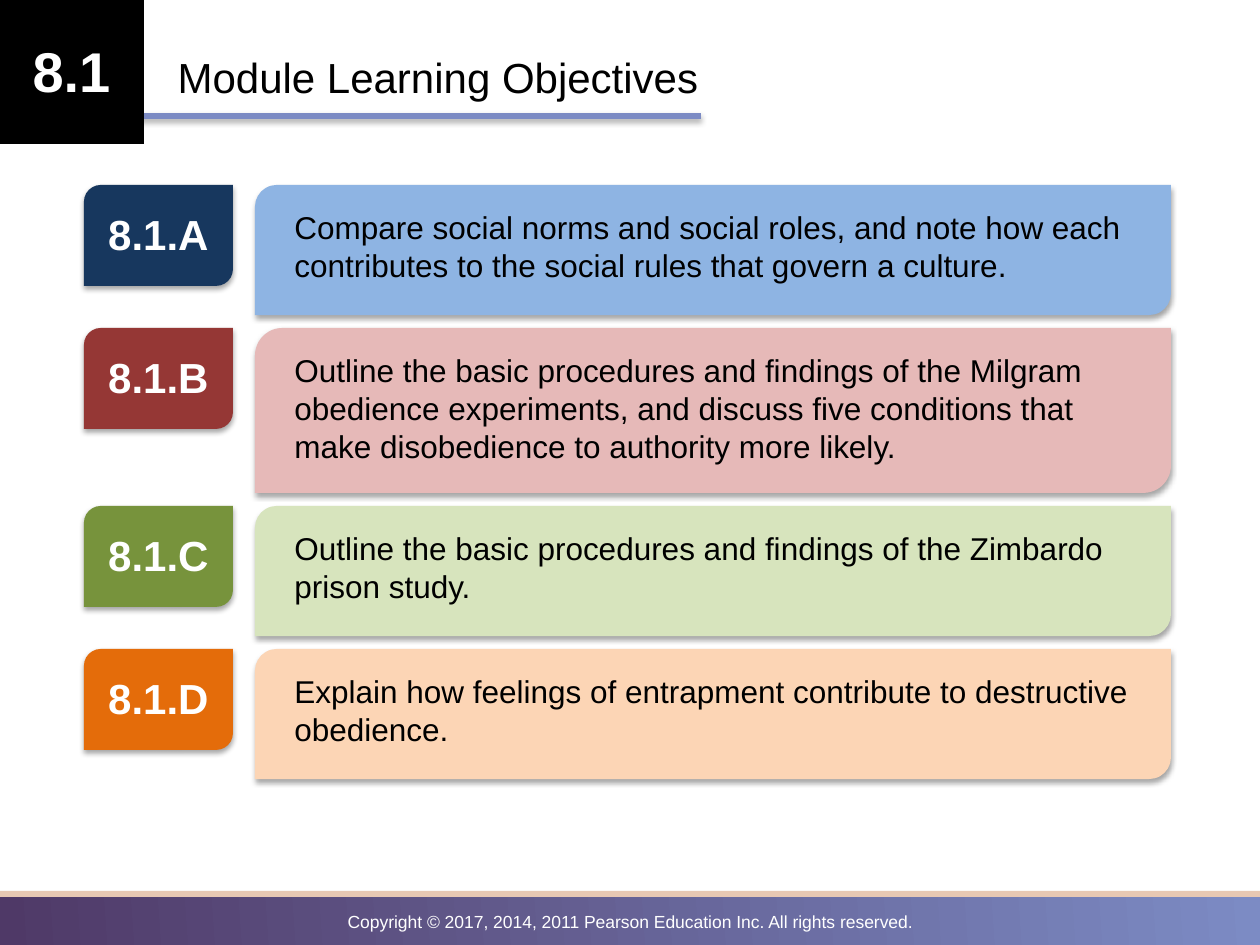
"""Build the learning objectives slide for module 8.1."""
import pptx
import pptx.dml.color
import pptx.enum.shapes
import pptx.enum.text
import pptx.oxml
import pptx.util

KIND = pptx.enum.shapes.MSO_SHAPE
ALIGN = pptx.enum.text.PP_ALIGN
ANCHOR = pptx.enum.text.MSO_ANCHOR
SHADE = (
    '<a:effectLst xmlns:a="http://schemas.openxmlformats.org/drawingml/2006/main">'
    '<a:outerShdw blurRad="40000" dist="23000" dir="5400000" rotWithShape="0">'
    '<a:srgbClr val="000000"><a:alpha val="35000"/></a:srgbClr>'
    '</a:outerShdw></a:effectLst>'
)


def px(num):
    return pptx.util.Emu(round(num * 914400 / 126))


def hue(code):
    return pptx.dml.color.RGBColor.from_string(code)


class Deck:
    font = "Arial"
    dark = "000000"
    light = "FFFFFF"

    def __init__(self):
        self.file = pptx.Presentation()
        self.file.slide_width, self.file.slide_height = px(1260), px(945)
        self.slide = self.file.slides.add_slide(self.file.slide_layouts[5])

    def block(self, kind, box, fill, shade=False):
        shape = self.slide.shapes.add_shape(kind, *map(px, box))
        shape.line.fill.background()
        if isinstance(fill, tuple):
            shape.fill.gradient()
            shape.fill.gradient_angle = 4
            for stop, code in zip(shape.fill.gradient_stops, fill):
                stop.color.rgb = hue(code)
        else:
            shape.fill.solid()
            shape.fill.fore_color.rgb = hue(fill)
        if shade:
            shape._element.spPr.append(pptx.oxml.parse_xml(SHADE))
        else:
            shape.shadow.inherit = False

    def words(self, shape, text, size, color, align, bold=False):
        frame = shape.text_frame
        frame.word_wrap = True
        frame.auto_size = pptx.enum.text.MSO_AUTO_SIZE.NONE
        frame.vertical_anchor = ANCHOR.TOP
        para = frame.paragraphs[0]
        para.alignment = align
        run = para.add_run()
        run.text = text
        run.font.name = self.font
        run.font.size = pptx.util.Pt(size)
        run.font.bold = bold
        run.font.color.rgb = hue(color)

    def label(self, box, text, size, bold=True):
        shape = self.slide.shapes.add_textbox(*map(px, box))
        self.words(shape, text, size, self.light, ALIGN.CENTER, bold)

    def body(self, box, text):
        shape = self.slide.shapes.add_textbox(*map(px, box))
        self.words(shape, text, 18, self.dark, ALIGN.LEFT)

    def title(self, box, text):
        shape = self.slide.shapes.title
        shape.left, shape.top, shape.width, shape.height = map(px, box)
        self.words(shape, text, 24, self.dark, ALIGN.LEFT)

    def goal(self, top, high, code, text, deep, pale):
        self.block(KIND.ROUND_2_DIAG_RECTANGLE, (84, top, 149, 101), deep, True)
        self.label((84, top + 17, 149, 63), code, 24)
        self.block(KIND.ROUND_2_DIAG_RECTANGLE, (255, top, 916, high), pale, True)
        self.body((282, top + 17, 881, high - 40), text)


GOALS = [
    ("8.1.A", 130, "17375E", "8EB4E3",
     "Compare social norms and social roles, and note how each contributes "
     "to the social rules that govern a culture."),
    ("8.1.B", 165, "953735", "E6B9B8",
     "Outline the basic procedures and findings of the Milgram obedience "
     "experiments, and discuss five conditions that make disobedience to "
     "authority more likely."),
    ("8.1.C", 130, "77933C", "D7E4BD",
     "Outline the basic procedures and findings of the Zimbardo prison study."),
    ("8.1.D", 130, "E46C0A", "FCD5B5",
     "Explain how feelings of entrapment contribute to destructive obedience."),
]


def main():
    deck = Deck()
    deck.block(KIND.RECTANGLE, (0, 892, 1260, 57), ("4F3967", "7C8BC4"))
    deck.block(KIND.RECTANGLE, (0, 891, 1266, 6), "E7C8B3")
    deck.label((0, 905, 1260, 34),
               "Copyright © 2017, 2014, 2011 Pearson Education Inc. All rights reserved.",
               10, False)
    deck.block(KIND.RECTANGLE, (-25, 113, 726, 6), "7C8BC4", True)
    deck.block(KIND.RECTANGLE, (-1, -1, 145, 145), deck.dark)
    deck.label((-1, 30, 145, 81), "8.1", 32)
    deck.title((165, 45, 971, 63), "Module Learning Objectives")
    top, gap = 185, 13
    for code, high, deep, pale, text in GOALS:
        deck.goal(top, high, code, text, deep, pale)
        top += high + gap
    deck.file.save("out.pptx")


if __name__ == "__main__":
    main()
